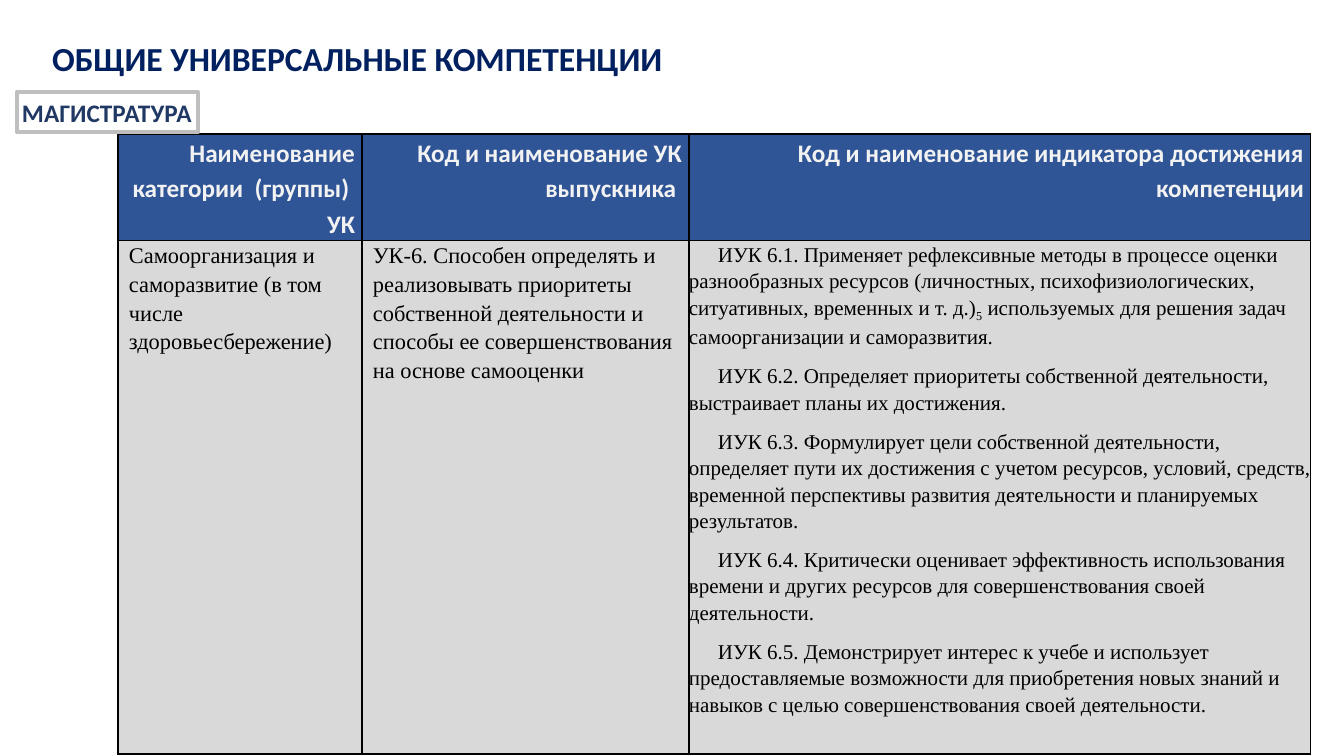
"""Build the slide on general universal competences for the master's programme."""
import lxml.etree
import pptx
import pptx.dml.color
import pptx.enum.shapes
import pptx.enum.text
import pptx.oxml.ns
import pptx.util

RGBColor = pptx.dml.color.RGBColor
PP_ALIGN = pptx.enum.text.PP_ALIGN
Pt = pptx.util.Pt

TITLE = "ОБЩИЕ УНИВЕРСАЛЬНЫЕ КОМПЕТЕНЦИИ"
LEVEL = "МАГИСТРАТУРА"
HEADERS = [
    "Наименование категории  (группы)  УК",
    "Код и наименование УК выпускника ",
    "Код и наименование индикатора достижения компетенции",
]
CATEGORY = "Самоорганизация и саморазвитие (в том числе здоровьесбережение)"
COMPETENCE = (
    "УК-6. Способен определять и реализовывать приоритеты собственной деятельности "
    "и способы ее совершенствования на основе самооценки"
)
SUBSCRIPT = "5"
INDICATORS = [
    ("ИУК 6.1. Применяет рефлексивные методы в процессе оценки разнообразных ресурсов "
     "(личностных, психофизиологических, ситуативных, временных и т. д.)",
     SUBSCRIPT,
     " используемых для решения задач самоорганизации и саморазвития."),
    ("ИУК 6.2. Определяет приоритеты собственной деятельности, выстраивает планы их достижения.",),
    ("ИУК 6.3. Формулирует цели собственной деятельности, определяет пути их достижения "
     "с учетом ресурсов, условий, средств, временной перспективы развития деятельности "
     "и планируемых результатов.",),
    ("ИУК 6.4. Критически оценивает эффективность использования времени и других ресурсов "
     "для совершенствования своей деятельности.",),
    ("ИУК 6.5. Демонстрирует интерес к учебе и использует предоставляемые возможности "
     "для приобретения новых знаний и навыков с целью совершенствования своей деятельности.",),
]

NAVY = RGBColor(0x00, 0x20, 0x60)
DARK_BLUE = RGBColor(0x20, 0x38, 0x64)
HEADER_BLUE = RGBColor(0x2F, 0x55, 0x97)
OFF_WHITE = RGBColor(0xF2, 0xF2, 0xF2)
WHITE = RGBColor(0xFF, 0xFF, 0xFF)
BODY_GREY = RGBColor(0xD9, 0xD9, 0xD9)
FRAME_GREY = RGBColor(0xBF, 0xBF, 0xBF)
BLACK = RGBColor(0x00, 0x00, 0x00)

PX = 914400 / 100.8
SLIDE_SIZE = (1344, 756)
TITLE_BOX = (42, 33, 1210, 50)
LEVEL_BOX = (17, 92, 181, 40)
TABLE_ORIGIN = (118, 134)
COLUMN_WIDTHS = [244, 327, 622]
ROW_HEIGHTS = [104, 514]

TITLE_FONT = {"name": "Calibri", "size": Pt(24), "bold": True, "color": NAVY}
LEVEL_FONT = {"name": "Calibri", "size": Pt(18), "bold": True, "color": DARK_BLUE}
HEADER_FONT = {"name": "Calibri", "size": Pt(18), "bold": True, "color": OFF_WHITE}
BODY_FONT = {"name": "Times New Roman", "size": Pt(16), "bold": False, "color": BLACK}
INDICATOR_FONT = {**BODY_FONT, "size": Pt(15)}

LEFT = {"alignment": PP_ALIGN.LEFT}
HEADER_PARAGRAPH = {"alignment": PP_ALIGN.RIGHT, "line_spacing": 1.15}
BODY_PARAGRAPH = {"alignment": PP_ALIGN.LEFT, "line_spacing": 1.15}
INDICATOR_PARAGRAPH = {"alignment": PP_ALIGN.LEFT, "line_spacing": 1.14}


def emu(pixels):
    return round(pixels * PX)


def set_values(target, values):
    for name, value in values.items():
        setattr(target, name, value)


def write(frame, paragraphs, font, layout, margin=0, indent=0, gap=0):
    for index, runs in enumerate(paragraphs):
        paragraph = frame.add_paragraph() if index else frame.paragraphs[0]
        set_values(paragraph, layout)
        if index and gap:
            paragraph.space_before = Pt(gap)
        if margin or indent:
            properties = paragraph._p.get_or_add_pPr()
            properties.set("marL", str(emu(margin)))
            properties.set("indent", str(emu(indent)))
        for text in runs:
            run = paragraph.add_run()
            run.text = text
            set_values(run.font, {key: font[key] for key in ("name", "size", "bold")})
            run.font.color.rgb = font["color"]
            if text == SUBSCRIPT:
                run._r.get_or_add_rPr().set("baseline", "-25000")


def set_box(shape, box):
    set_values(shape, dict(zip(("left", "top", "width", "height"), map(emu, box))))


def add_borders(cell):
    properties = cell._tc.get_or_add_tcPr()
    for side in ("lnL", "lnR", "lnT", "lnB"):
        line = lxml.etree.SubElement(
            properties, pptx.oxml.ns.qn(f"a:{side}"), w=str(Pt(1)))
        fill = lxml.etree.SubElement(line, pptx.oxml.ns.qn("a:solidFill"))
        lxml.etree.SubElement(fill, pptx.oxml.ns.qn("a:srgbClr"), val=str(BLACK))


def add_title(slide):
    title = slide.shapes.title
    set_box(title, TITLE_BOX)
    set_values(title.text_frame, {
        "word_wrap": True,
        "auto_size": pptx.enum.text.MSO_AUTO_SIZE.NONE,
        "vertical_anchor": pptx.enum.text.MSO_ANCHOR.TOP,
    })
    write(title.text_frame, [(TITLE,)], TITLE_FONT, LEFT)


def add_competence_table(slide):
    table = slide.shapes.add_table(
        len(ROW_HEIGHTS), len(COLUMN_WIDTHS), *map(emu, TABLE_ORIGIN),
        emu(sum(COLUMN_WIDTHS)), emu(sum(ROW_HEIGHTS))).table
    set_values(table, {"first_row": False, "horz_banding": False})
    for column, width in zip(table.columns, COLUMN_WIDTHS):
        column.width = emu(width)
    for row, height in zip(table.rows, ROW_HEIGHTS):
        row.height = emu(height)

    header = {"font": HEADER_FONT, "layout": HEADER_PARAGRAPH}
    body = {"font": BODY_FONT, "layout": BODY_PARAGRAPH, "margin": 4}
    indicator = {"font": INDICATOR_FONT, "layout": INDICATOR_PARAGRAPH, "indent": 29, "gap": 9}
    rows = [
        (HEADER_BLUE, [([(text,)], header, 7) for text in HEADERS]),
        (BODY_GREY, [([(CATEGORY,)], body, 7), ([(COMPETENCE,)], body, 7),
                     (INDICATORS, indicator, 0)]),
    ]
    for row_index, (color, cells) in enumerate(rows):
        for column_index, (paragraphs, style, inset) in enumerate(cells):
            cell = table.cell(row_index, column_index)
            set_values(cell, {"margin_left": emu(inset), "margin_right": emu(inset),
                              "margin_top": 0, "margin_bottom": 0})
            add_borders(cell)
            cell.fill.solid()
            cell.fill.fore_color.rgb = color
            write(cell.text_frame, paragraphs, **style)


def add_level_label(slide):
    label = slide.shapes.add_shape(
        pptx.enum.shapes.MSO_SHAPE.RECTANGLE, *map(emu, LEVEL_BOX))
    label.shadow.inherit = False
    label.fill.solid()
    label.fill.fore_color.rgb = WHITE
    label.line.color.rgb = FRAME_GREY
    label.line.width = Pt(3)
    sides = ("left", "top", "right", "bottom")
    set_values(label.text_frame, {f"margin_{side}": emu(5) for side in sides})
    set_values(label.text_frame, {
        "word_wrap": False,
        "auto_size": pptx.enum.text.MSO_AUTO_SIZE.SHAPE_TO_FIT_TEXT,
        "vertical_anchor": pptx.enum.text.MSO_ANCHOR.TOP,
    })
    write(label.text_frame, [(LEVEL,)], LEVEL_FONT, LEFT)


def main():
    presentation = pptx.Presentation()
    set_values(presentation, dict(zip(("slide_width", "slide_height"), map(emu, SLIDE_SIZE))))
    slide = presentation.slides.add_slide(presentation.slide_layouts[5])
    add_title(slide)
    add_competence_table(slide)
    add_level_label(slide)
    presentation.save("out.pptx")


if __name__ == "__main__":
    main()
